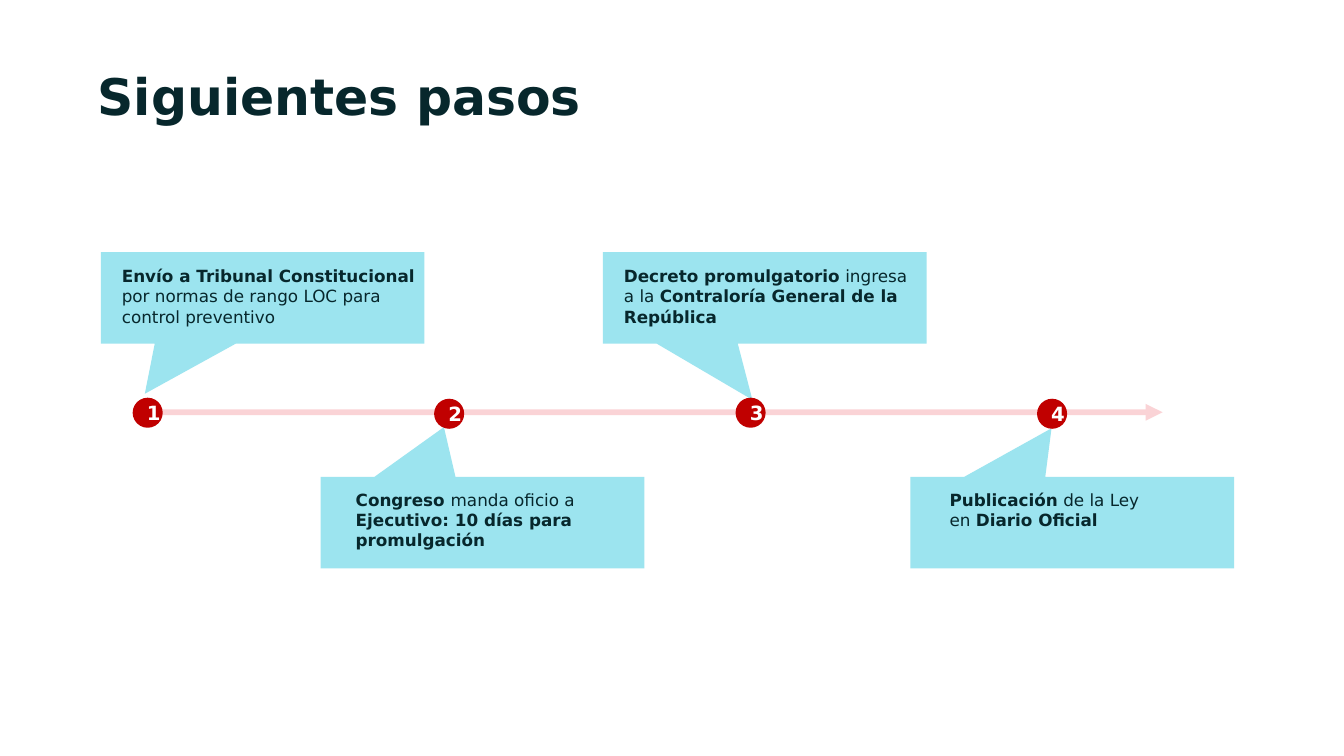
from lxml import etree
from pptx import Presentation
from pptx.dml.color import RGBColor
from pptx.enum.shapes import MSO_CONNECTOR, MSO_SHAPE
from pptx.enum.text import MSO_ANCHOR, PP_ALIGN
from pptx.oxml.ns import qn
from pptx.util import Inches, Pt

CALLOUT, OVAL = MSO_SHAPE.RECTANGULAR_CALLOUT, MSO_SHAPE.OVAL
STRAIGHT = MSO_CONNECTOR.STRAIGHT
MIDDLE, CENTER = MSO_ANCHOR.MIDDLE, PP_ALIGN.CENTER

FONT = "DejaVu Sans"
DARK, WHITE, CYAN, RED, PINK = "07272C", "FFFFFF", "9CE4EF", "C00000", "F38A90"
CALLOUT_W, CALLOUT_H = 3.21, 0.91
DOT, DOT_LEFT, DOT_GAP = 0.27, 1.33, 2.99

# callout left and top, pointer, text offset and size, dot top, runs (text, bold)
STEPS = [
    ((1, 2.5), (-0.364, 1.046), (0.11, 0.09, 3.21, 0.71), 3.96,
     [("Envío a Tribunal Constitucional ", True),
      ("por normas de rango LOC para control preventivo", False)]),
    ((3.18, 4.73), (-0.119, -1.042), (0.25, 0.08, 3.07, 0.71), 3.97,
     [("Congreso ", True), ("manda oficio a ", False),
      ("Ejecutivo: 10 días para promulgación", True)]),
    ((5.98, 2.5), (-0.038, 1.112), (0.11, 0.09, 3.1, 0.71), 3.96,
     [("Decreto promulgatorio", True), (" ingresa a la ", False),
      ("Contraloría General de la República", True)]),
    ((9.03, 4.73), (-0.064, -1.029), (0.29, 0.08, 2.23, 0.5), 3.97,
     [("Publicación", True), (" de la Ley en ", False),
      ("Diario Oficial", True)]),
]


def rgb(color):
    return RGBColor.from_string(color)


def add_runs(p, runs, size, color):
    for text, bold in runs:
        r = p.add_run()
        r.text = text
        for name, value in dict(name=FONT, size=Pt(size), bold=bold).items():
            setattr(r.font, name, value)
        r.font.color.rgb = rgb(color)


def add_text(s, box, runs, size):
    tf = s.shapes.add_textbox(*map(Inches, box)).text_frame
    tf.word_wrap = True
    add_runs(tf.paragraphs[0], runs, size, DARK)
    return tf


def add_filled(s, kind, box, color):
    sp = s.shapes.add_shape(kind, *map(Inches, box))
    sp.shadow.inherit = False
    sp.fill.solid()
    sp.fill.fore_color.rgb = rgb(color)
    return sp


def add_title(s, box, text):
    tf = add_text(s, box, [(text, True)], 36)
    tf.vertical_anchor = MIDDLE
    tf.paragraphs[0].line_spacing = 0.9


def add_time_arrow(s, left, right, y):
    line = s.shapes.add_connector(STRAIGHT, *map(Inches, (left, y, right, y)))
    line.line.width = Pt(4)
    line.line.color.rgb = rgb(PINK)
    ln = line.line._get_or_add_ln()
    color = ln.find(".//" + qn("a:srgbClr"))
    etree.SubElement(color, qn("a:alpha"), val="36000")
    etree.SubElement(ln, qn("a:tailEnd"), type="triangle")
    etree.SubElement(line._element.spPr, qn("a:effectLst"))


def add_callout(s, corner, pointer, text_box, runs):
    left, top = corner
    sp = add_filled(s, CALLOUT, (left, top, CALLOUT_W, CALLOUT_H), CYAN)
    sp.line.fill.background()
    for i, value in enumerate(pointer):
        sp.adjustments[i] = value
    dx, dy, width, height = text_box
    add_text(s, (left + dx, top + dy, width, height), runs, 12)


def add_dot(s, left, top, number):
    sp = add_filled(s, OVAL, (left, top, DOT, DOT), RED)
    sp.line.color.rgb = rgb(RED)
    sp.line.width = Pt(2)
    tf = sp.text_frame
    margins = dict(margin_left=0.12, margin_right=0, margin_top=0, margin_bottom=0)
    for name, value in margins.items():
        setattr(tf, name, Inches(value))
    tf.word_wrap = False
    tf.vertical_anchor = MIDDLE
    p = tf.paragraphs[0]
    p.alignment = CENTER
    add_runs(p, [(str(number), True)], 14, WHITE)


def add_timeline(s):
    add_time_arrow(s, 1.48, 11.53, 4.09)
    for i, (corner, pointer, text_box, dot_top, runs) in enumerate(STEPS):
        add_callout(s, corner, pointer, text_box, runs)
        add_dot(s, DOT_LEFT + i * DOT_GAP, dot_top, i + 1)


def main():
    prs = Presentation()
    prs.slide_width, prs.slide_height = Inches(13.33), Inches(7.5)
    s = prs.slides.add_slide(prs.slide_layouts[6])
    add_title(s, (0.87, 0.62, 9.52, 0.72), "Siguientes pasos")
    add_timeline(s)
    prs.save("out.pptx")


if __name__ == "__main__":
    main()
